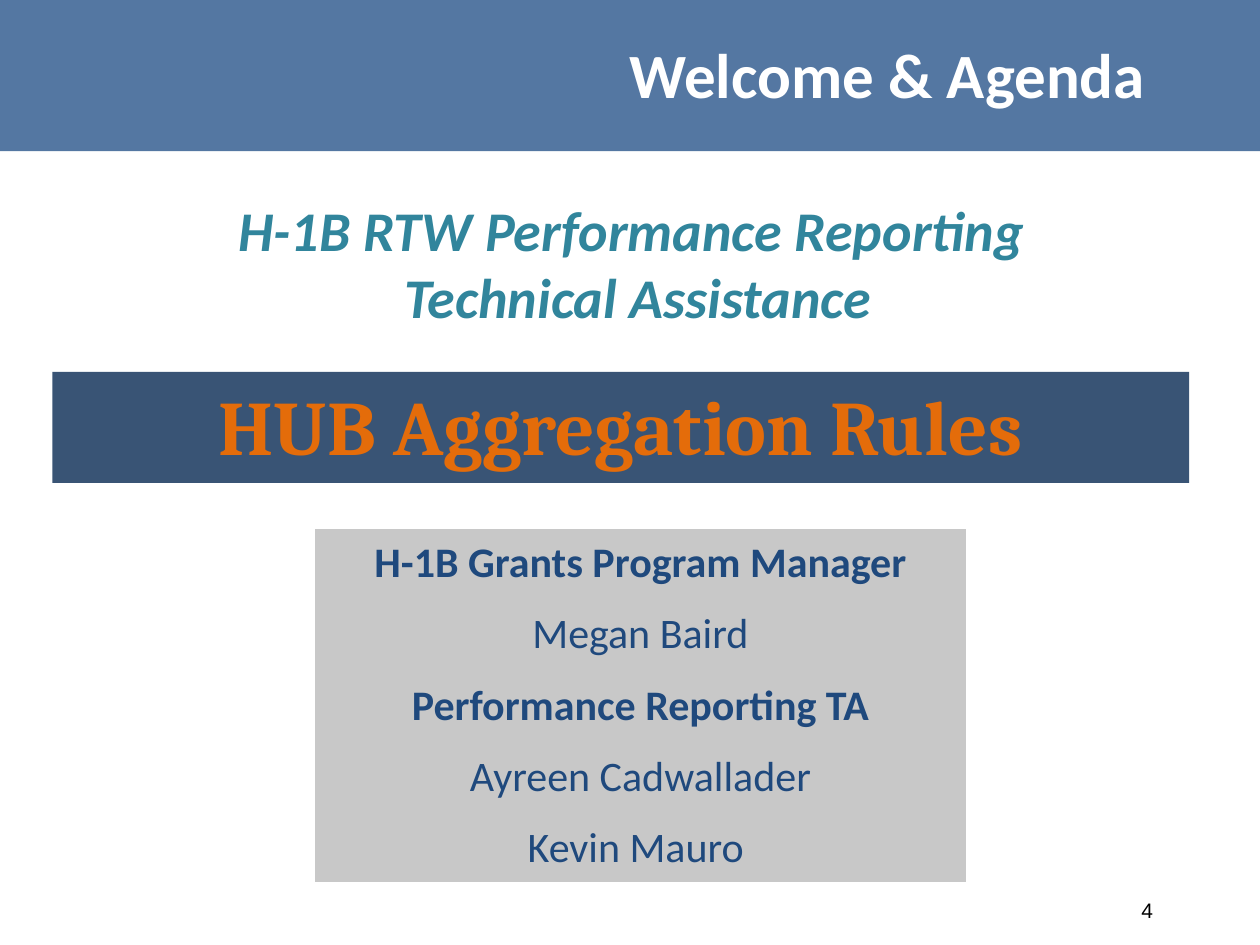
from dataclasses import dataclass

import pptx
import pptx.dml.color
import pptx.enum.shapes
import pptx.enum.text
import pptx.oxml
import pptx.oxml.ns
import pptx.util

Pt = pptx.util.Pt
Align = pptx.enum.text.PP_ALIGN
Anchor = pptx.enum.text.MSO_ANCHOR


@dataclass(frozen=True)
class Style:
    font: str
    size: float
    color: str
    bold: bool = False
    italic: bool = False


@dataclass(frozen=True)
class Theme:
    header_fill: str = "376092"
    topic_fill: str = "17375E"
    presenters_fill: str = "BFBFBF"
    fill_opacity: int = 85
    title: Style = Style("Calibri", 36, "FFFFFF", bold=True)
    subtitle: Style = Style("Calibri", 32, "31859C", bold=True, italic=True)
    topic: Style = Style("Cambria", 44, "E46C0A", bold=True)
    role: Style = Style("Calibri", 24, "1F497D", bold=True)
    person: Style = Style("Calibri", 24, "1F497D")
    page_number: Style = Style("Arial", 12, "000000")


THEME = Theme()


def rgb(value):
    return pptx.dml.color.RGBColor.from_string(value)


def add_panel(slide, left, top, width, height, color):
    """Add a borderless, slightly transparent rectangle."""
    shape = slide.shapes.add_shape(
        pptx.enum.shapes.MSO_SHAPE.RECTANGLE, Pt(left), Pt(top), Pt(width), Pt(height)
    )
    shape.shadow.inherit = False
    shape.line.fill.background()
    shape.fill.solid()
    shape.fill.fore_color.rgb = rgb(color)
    color_element = shape.fill._xPr.find(".//" + pptx.oxml.ns.qn("a:srgbClr"))
    alpha = pptx.oxml.parse_xml(f'<a:alpha {pptx.oxml.ns.nsdecls("a")}/>')
    alpha.set("val", str(THEME.fill_opacity * 1000))
    color_element.append(alpha)
    return shape


def add_text_box(slide, left, top, width, height):
    return slide.shapes.add_textbox(Pt(left), Pt(top), Pt(width), Pt(height))


def write_lines(shape, lines, alignment=Align.CENTER, anchor=Anchor.TOP, gap=0):
    """Write (text, style) pairs as paragraphs, with gap points between them."""
    frame = shape.text_frame
    frame.word_wrap = True
    frame.vertical_anchor = anchor
    for index, (text, style) in enumerate(lines):
        paragraph = frame.add_paragraph() if index else frame.paragraphs[0]
        paragraph.text = text
        paragraph.alignment = alignment
        paragraph.space_before = Pt(gap if index else 0)
        font = paragraph.font
        font.name = style.font
        font.size = Pt(style.size)
        font.bold = style.bold
        font.italic = style.italic
        font.color.rgb = rgb(style.color)


def main():
    presentation = pptx.Presentation()
    presentation.slide_width = Pt(720)
    presentation.slide_height = Pt(540)
    slide = presentation.slides.add_slide(presentation.slide_layouts[6])

    add_panel(slide, 0, 0, 720, 86.4, THEME.header_fill)
    title = add_text_box(slide, 294, 0, 426, 84)
    write_lines(title, [("Welcome & Agenda", THEME.title)], anchor=Anchor.MIDDLE)

    page_number = add_text_box(slide, 498, 505.5, 168, 28.75)
    write_lines(page_number, [("4", THEME.page_number)], Align.RIGHT, Anchor.MIDDLE)

    presenters = add_panel(slide, 180, 302.4, 372, 201.6, THEME.presenters_fill)
    write_lines(
        presenters,
        [
            ("H-1B Grants Program Manager", THEME.role),
            ("Megan Baird", THEME.person),
            ("Performance Reporting TA", THEME.role),
            ("Ayreen Cadwallader", THEME.person),
            ("Kevin Mauro ", THEME.person),
        ],
        gap=12,
    )

    subtitle = add_text_box(slide, 49.5, 108, 630, 85)
    write_lines(
        subtitle,
        [
            ("H-1B RTW Performance Reporting ", THEME.subtitle),
            ("Technical Assistance", THEME.subtitle),
        ],
    )

    topic = add_panel(slide, 30, 212.5, 649.5, 63.5, THEME.topic_fill)
    write_lines(topic, [("HUB Aggregation Rules", THEME.topic)])

    presentation.save("out.pptx")


if __name__ == "__main__":
    main()
